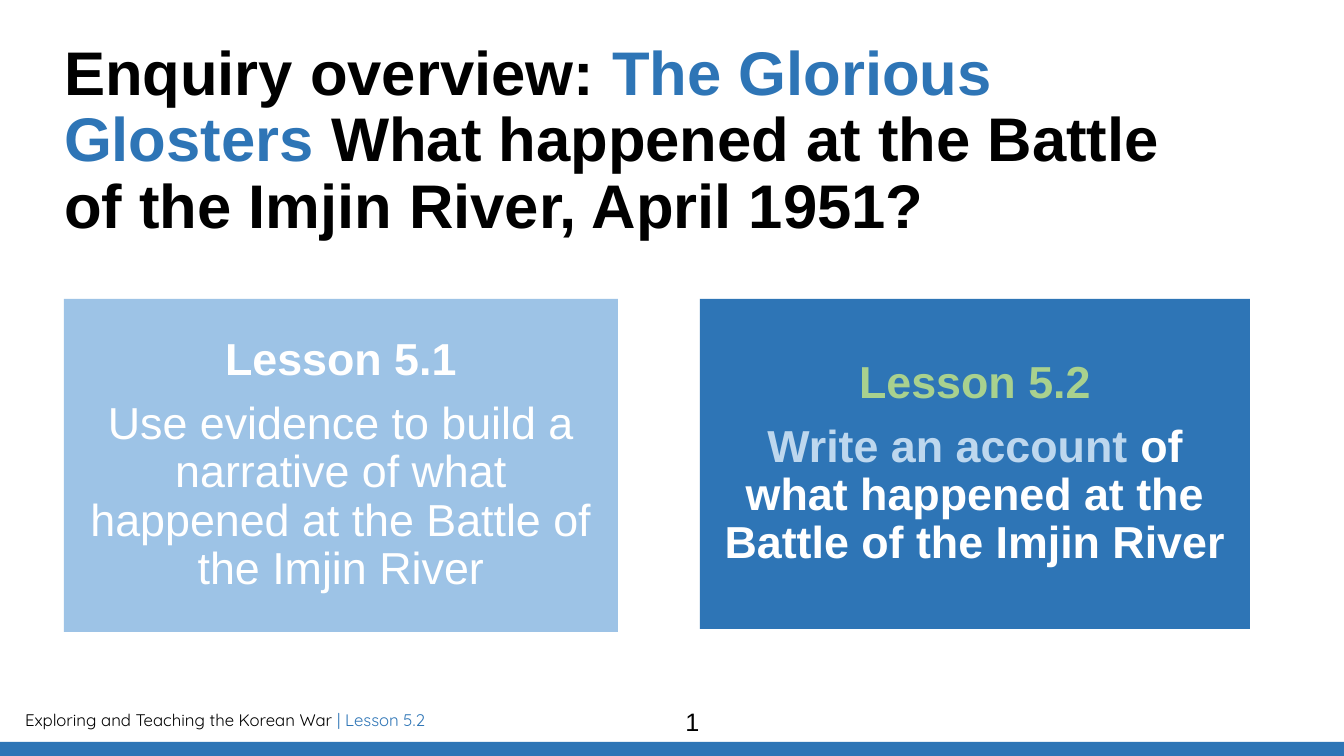
from pptx import Presentation
from pptx.dml.color import RGBColor
from pptx.enum.shapes import MSO_SHAPE as Shape
from pptx.enum.text import MSO_ANCHOR as Anchor, PP_ALIGN as Align
from pptx.util import Emu, Pt

TITLE = [[
    ("Enquiry overview: ", "black", True),
    ("The Glorious Glosters ", "blue", True),
    ("What happened at the Battle of the Imjin River, April 1951?", "black", True),
]]
LESSONS = [
    {"area": (64, 299, 554, 333), "fill": "light_blue", "text": [
        [("Lesson 5.1", "white", True)],
        [("Use evidence to build a narrative of what happened at the Battle of "
          "the Imjin River", "white", False)],
    ]},
    {"area": (700, 299, 550, 330), "fill": "blue", "text": [
        [("Lesson 5.2", "green", True)],
        [("Write an account ", "pale_blue", True),
         ("of what happened at the Battle of the Imjin River", "white", True)],
    ]},
]
FOOTER = [[
    ("Exploring and Teaching the Korean War ", "black", False),
    ("| Lesson 5.2", "blue", False),
]]
PAGE_NUMBER = [[("1", "black", False)]]

THEME = {
    "black": "000000", "white": "FFFFFF", "blue": "2E75B6",
    "light_blue": "9DC3E6", "pale_blue": "BDD7EE", "green": "A9D18E",
    "font": "Arial", "footer_font": "Quicksand",
    "title": 44, "lesson": 32, "number": 18, "footer": 12,
}
WIDTH, HEIGHT = 1344, 756
BAR_HEIGHT = 14


def px(length):
    return Emu(round(length * 914400 / 100.8))


def color(name):
    return RGBColor.from_string(THEME[name])


def write(shape, paragraphs, size, font="font", align=Align.LEFT,
          anchor=Anchor.TOP, insets=(10, 5), spacing=None, after=None):
    frame = shape.text_frame
    frame.word_wrap = True
    frame.vertical_anchor = anchor
    frame.margin_left = frame.margin_right = px(insets[0])
    frame.margin_top = frame.margin_bottom = px(insets[1])
    for index, runs in enumerate(paragraphs):
        para = frame.add_paragraph() if index else frame.paragraphs[0]
        para.alignment = align
        if spacing:
            para.line_spacing = spacing
        if after:
            para.space_after = Pt(after)
        for text, ink, bold in runs:
            span = para.add_run()
            span.text = text
            span.font.name = THEME[font]
            span.font.size = Pt(THEME[size])
            span.font.bold = bold
            span.font.color.rgb = color(ink)


def add_text(page, area, paragraphs, size, **style):
    box = page.shapes.add_textbox(*map(px, area))
    write(box, paragraphs, size, **style)


def add_block(page, area, fill):
    block = page.shapes.add_shape(Shape.RECTANGLE, *map(px, area))
    block.shadow.inherit = False
    block.fill.solid()
    block.fill.fore_color.rgb = color(fill)
    block.line.fill.background()
    return block


def main():
    deck = Presentation()
    deck.slide_width, deck.slide_height = px(WIDTH), px(HEIGHT)
    page = deck.slides.add_slide(deck.slide_layouts[6])

    add_text(page, (15, 705, 438, 30), FOOTER, "footer", font="footer_font")
    add_block(page, (0, HEIGHT - BAR_HEIGHT, WIDTH, BAR_HEIGHT), "blue")
    add_text(page, (64, 42, 1159, 190), TITLE, "title", insets=(0, 0), spacing=0.9)
    for lesson in LESSONS:
        block = add_block(page, lesson["area"], lesson["fill"])
        write(block, lesson["text"], "lesson", align=Align.CENTER,
              anchor=Anchor.MIDDLE, insets=(14, 14), spacing=0.9, after=11)
    add_text(page, (437, 701, 511, 40), PAGE_NUMBER, "number", align=Align.CENTER)

    deck.save("out.pptx")


if __name__ == "__main__":
    main()
